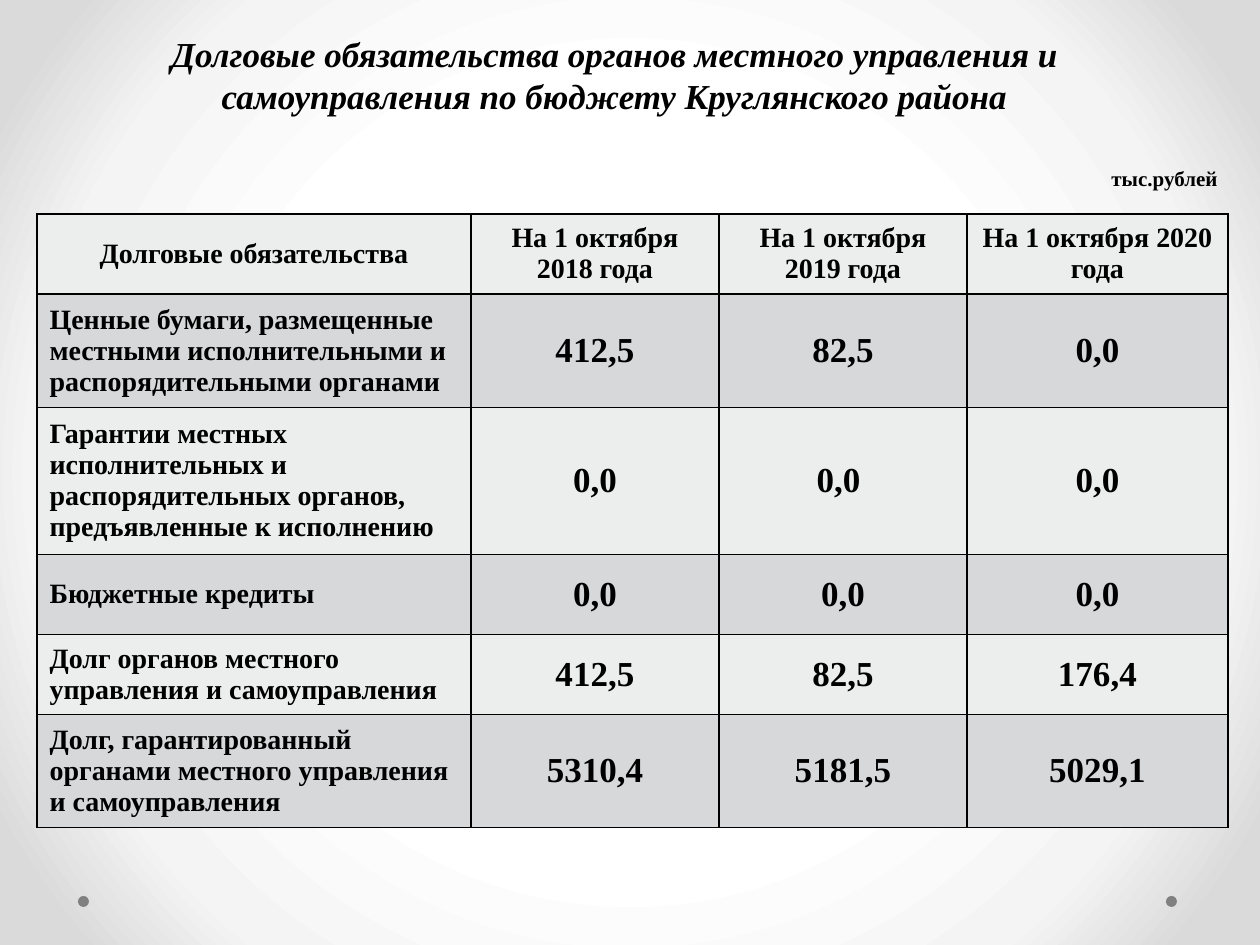
from lxml import etree
from pptx import Presentation, util as u
from pptx.dml.color import RGBColor
from pptx.enum import shapes, text
from pptx.oxml import ns

PX = 914400 / 126
FONT = "Times New Roman"
BLACK = RGBColor(0x00, 0x00, 0x00)
GREY = RGBColor(0x80, 0x80, 0x80)
LIGHT = RGBColor(0xEC, 0xED, 0xED)
DARK = RGBColor(0xD6, 0xD8, 0xD9)
GLOW = [
    (50, RGBColor(0xFF, 0xFF, 0xFF)),
    (76, RGBColor(0xF4, 0xF4, 0xF4)),
    (92, RGBColor(0xDA, 0xDA, 0xDA)),
]
LEFT, MID, RIGHT = text.PP_ALIGN.LEFT, text.PP_ALIGN.CENTER, text.PP_ALIGN.RIGHT

TITLE = "Долговые обязательства органов местного управления и самоуправления по бюджету Круглянского района"
COLS = [434, 248, 248, 261]
ROWS = [80, 113, 147, 80, 80, 113]
DATA = [
    ["Долговые обязательства", "На 1 октября 2018 года", "На 1 октября 2019 года", "На 1 октября 2020 года"],
    ["Ценные бумаги, размещенные местными исполнительными и распорядительными органами", "412,5", "82,5", "0,0"],
    ["Гарантии местных исполнительных и распорядительных органов, предъявленные к исполнению", "0,0", "0,0 ", "0,0"],
    ["Бюджетные кредиты", "0,0", "0,0", "0,0"],
    ["Долг органов местного управления и самоуправления", "412,5", "82,5", "176,4"],
    ["Долг, гарантированный органами местного управления и самоуправления", "5310,4", "5181,5", "5029,1"],
]


def px(*vals):
    """Turn pixel lengths into EMU."""
    return [u.Emu(round(v * PX)) for v in vals]


def add(root, tag, **attrs):
    """Append a DrawingML child element."""
    return etree.SubElement(root, ns.qn("a:" + tag), **attrs)


def write(frame, words, size=16, align=MID, slant=False):
    """Put one bold paragraph into a text frame."""
    par = frame.paragraphs[0]
    par.alignment = align
    run = par.add_run()
    run.text = words
    font = run.font
    font.name, font.size = FONT, u.Pt(size)
    font.bold, font.italic = True, slant
    font.color.rgb = BLACK


def label(slide, box, words, wrap=True, **style):
    """Add a text box with one paragraph."""
    frame = slide.shapes.add_textbox(*px(*box)).text_frame
    frame.word_wrap = wrap
    write(frame, words, **style)


def glow(slide):
    """Fill the background with a round gradient."""
    slide.background.fill.gradient()
    grad = slide.element.xpath(".//p:bg//a:gradFill")[0]
    for child in list(grad):
        grad.remove(child)
    stops = add(grad, "gsLst")
    for pos, tone in GLOW:
        add(add(stops, "gs", pos=str(pos * 1000)), "srgbClr", val=str(tone))
    half = dict.fromkeys("ltrb", "50000")
    add(add(grad, "path", path="circle"), "fillToRect", **half)


def dots(slide, box):
    """Place a grey dot at each end of the box."""
    x, y, w, h = box
    for left in (x, x + w - h):
        dot = slide.shapes.add_shape(shapes.MSO_SHAPE.OVAL, *px(left, y, h, h))
        dot.shadow.inherit = False
        dot.fill.solid()
        dot.fill.fore_color.rgb = GREY
        dot.line.fill.background()


def frame_cell(cell):
    """Draw a thin black border round a cell."""
    props = cell._tc.get_or_add_tcPr()
    for side in "LRTB":
        line = add(props, "ln" + side, w=str(u.Pt(1)))
        add(add(line, "solidFill"), "srgbClr", val=str(BLACK))


def grid(slide, x, y):
    """Build the debt table from its top left corner."""
    box = px(x, y, sum(COLS), sum(ROWS))
    table = slide.shapes.add_table(len(ROWS), len(COLS), *box).table
    table.first_row = table.horz_banding = False
    for col, wide in zip(table.columns, px(*COLS)):
        col.width = wide
    for row, high in zip(table.rows, px(*ROWS)):
        row.height = high
    for r, line in enumerate(DATA):
        for c, words in enumerate(line):
            cell = table.cell(r, c)
            frame_cell(cell)
            cell.fill.solid()
            cell.fill.fore_color.rgb = DARK if r % 2 else LIGHT
            cell.vertical_anchor = text.MSO_ANCHOR.MIDDLE
            write(cell.text_frame, words, size=20 if r and c else 16,
                  align=LEFT if r and not c else MID)


def main():
    """Build and save the slide."""
    deck = Presentation()
    deck.slide_width, deck.slide_height = px(1260, 945)
    slide = deck.slides.add_slide(deck.slide_layouts[6])
    glow(slide)
    dots(slide, (78, 896, 1099, 11))
    label(slide, (64, 26, 1101, 97), TITLE, size=20, slant=True)
    grid(slide, 37, 214)
    label(slide, (1098, 159, 132, 38), "тыс.рублей", wrap=False, size=12, align=RIGHT)
    deck.save("out.pptx")


if __name__ == "__main__":
    main()
